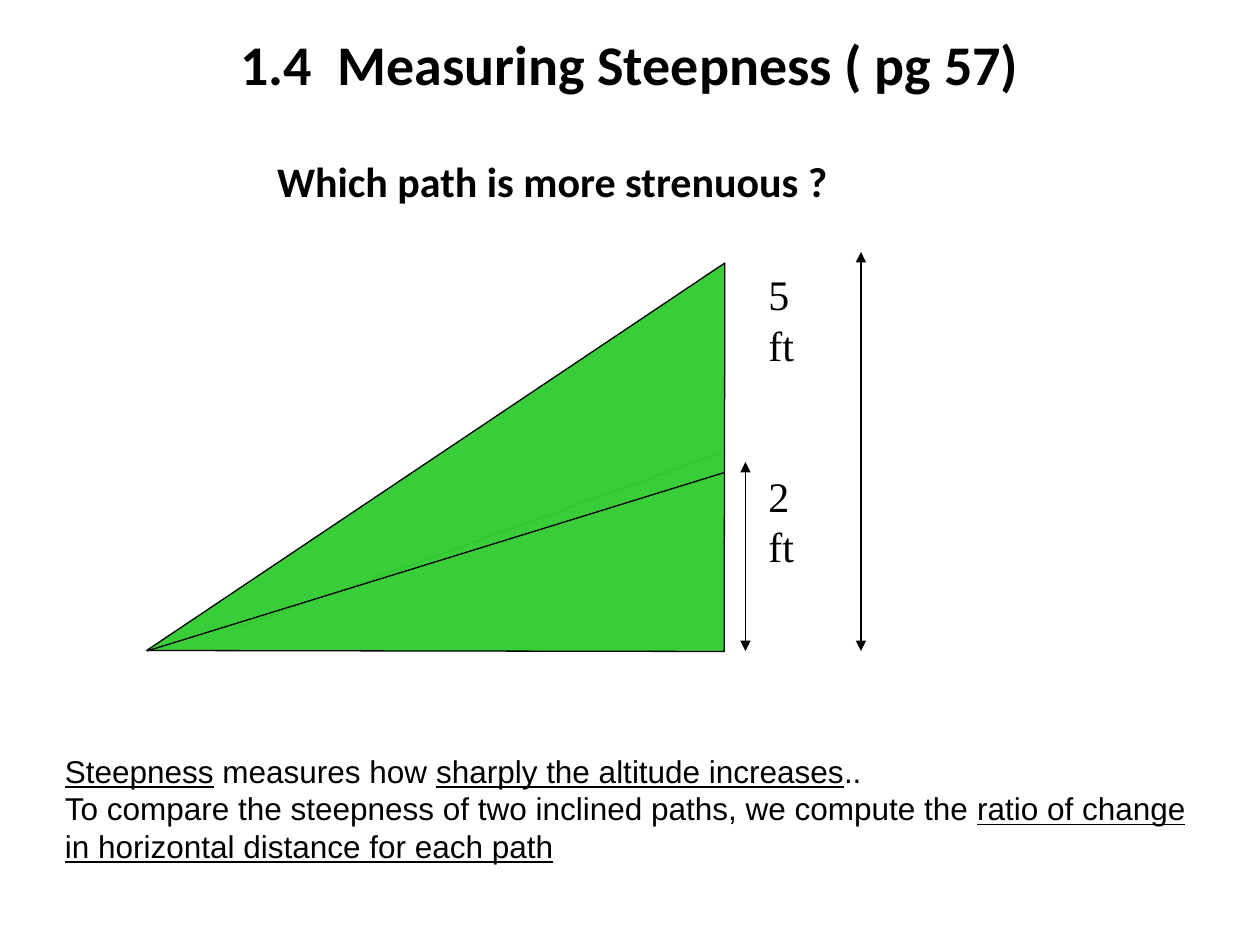
from lxml.etree import SubElement
from pptx import Presentation
from pptx.dml.color import RGBColor
from pptx.enum.shapes import MSO_CONNECTOR, MSO_SHAPE
from pptx.enum.text import MSO_ANCHOR, PP_ALIGN
from pptx.oxml.ns import qn
from pptx.util import Pt

PX = 7620  # 120 px to the inch


def color(value):
    return RGBColor.from_string(value)


def set_font(para, name, size, bold=False):
    para.font.name = name
    para.font.size = Pt(size)
    para.font.bold = bold
    para.font.color.rgb = color("000000")


deck = Presentation()
deck.slide_width, deck.slide_height = 1200 * PX, 900 * PX
page = deck.slides.add_slide(deck.slide_layouts[5])

# Title
title = page.shapes.title
title.left, title.top, title.width, title.height = 90 * PX, 0, 1020 * PX, 120 * PX
title.text_frame.text = "1.4  Measuring Steepness ( pg 57)"
title.text_frame.vertical_anchor = MSO_ANCHOR.MIDDLE
title.text_frame.paragraphs[0].alignment = PP_ALIGN.CENTER
set_font(title.text_frame.paragraphs[0], "Calibri", 32, True)

# Paths and height arrows; the first path lies behind the triangle
lines = [
    (220, 600, 690, 430, False),
    (140, 620, 690, 450, False),
    (820, 240, 820, 620, True),
    (710, 440, 710, 620, True),
]
for number, (x1, y1, x2, y2, is_arrow) in enumerate(lines):
    line = page.shapes.add_connector(
        MSO_CONNECTOR.STRAIGHT, x1 * PX, y1 * PX, x2 * PX, y2 * PX)
    line.line.color.rgb = color("000000")
    line.line.width = Pt(0.75)
    SubElement(line._element.spPr, qn("a:effectLst"))
    if is_arrow:
        for end in ("a:headEnd", "a:tailEnd"):
            SubElement(line.line._get_or_add_ln(), qn(end), type="triangle")

    # Steep hill, slightly transparent, over the first path
    if number == 0:
        hill = page.shapes.add_shape(
            MSO_SHAPE.RIGHT_TRIANGLE, 230 * PX, 160 * PX, 370 * PX, 550 * PX)
        hill.rotation = 270.1
        hill.shadow.inherit = False
        hill.fill.solid()
        hill.fill.fore_color.rgb = color("33CC33")
        fill_color = hill._element.spPr.find(qn("a:solidFill"))[0]
        SubElement(fill_color, qn("a:alpha"), val="97000")
        hill.line.color.rgb = color("000000")
        hill.line.width = Pt(0.75)

# Question and height labels
labels = [
    ("Which path is more strenuous ?", 252, 142, 620, 60, "Calibri", True),
    ("5 ft", 720, 250, 78, 55, "Times New Roman", False),
    ("2 ft", 720, 442, 78, 55, "Times New Roman", False),
]
for text, left, top, width, height, font, bold in labels:
    box = page.shapes.add_textbox(left * PX, top * PX, width * PX, height * PX)
    box.text_frame.word_wrap = True
    box.text_frame.text = text
    set_font(box.text_frame.paragraphs[0], font, 24, bold)

# Explanation: each run is (text, underlined)
explanation = [
    [("Steepness", True), (" measures how ", False),
     ("sharply the altitude increases", True), ("..", False)],
    [("To compare the steepness of two inclined paths, we compute the ", False),
     ("ratio of change", True)],
    [("in horizontal distance for each path", True)],
]
box = page.shapes.add_textbox(50 * PX, 710 * PX, 1094 * PX, 120 * PX)
box.text_frame.word_wrap = False
for number, runs in enumerate(explanation):
    para = box.text_frame.add_paragraph() if number else box.text_frame.paragraphs[0]
    set_font(para, "Arial", 18)
    for text, underlined in runs:
        span = para.add_run()
        span.text = text
        span.font.underline = underlined

deck.save("out.pptx")
